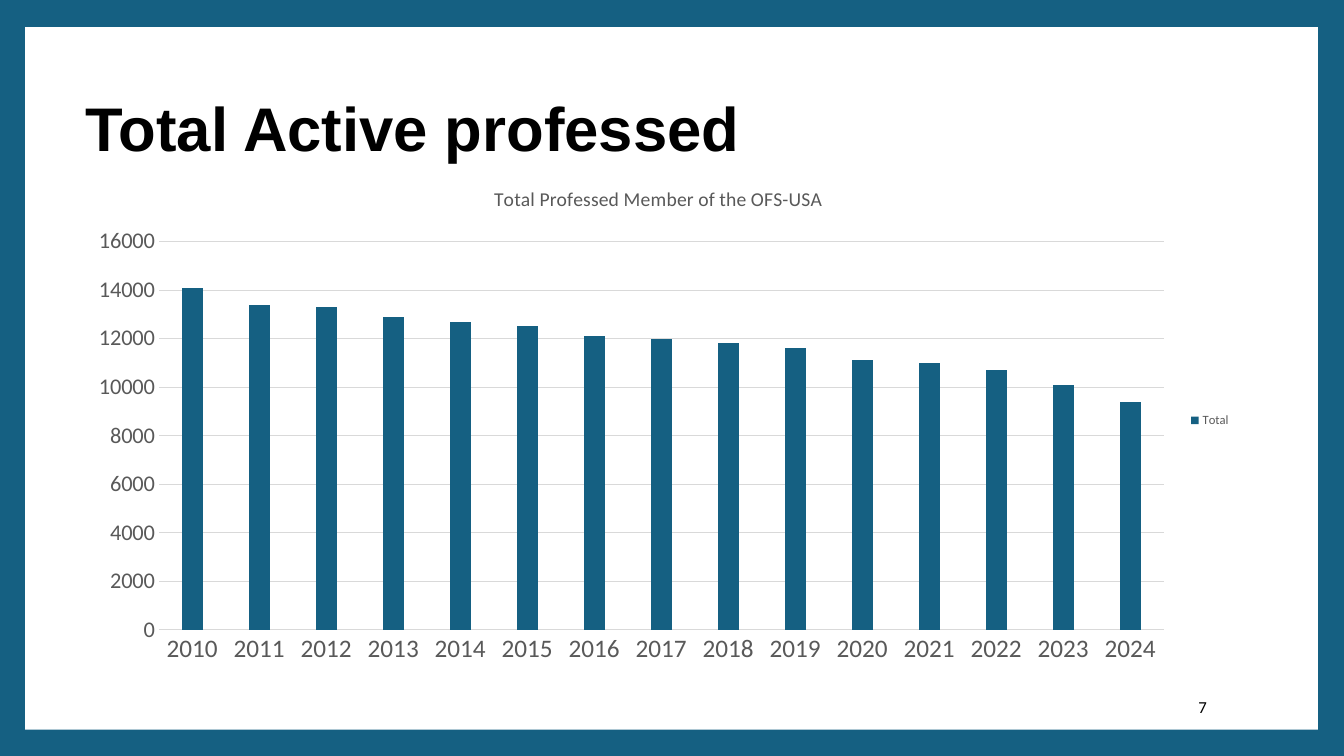
"""Build the slide charting total active professed members by year."""
from dataclasses import dataclass

import pptx
import pptx.chart.data
import pptx.dml.color
import pptx.enum.chart
import pptx.enum.shapes
import pptx.enum.text
import pptx.util

Inches = pptx.util.Inches
Pt = pptx.util.Pt
Align = pptx.enum.text.PP_ALIGN

COLORS = {
    "blue": "156082",
    "white": "FFFFFF",
    "black": "000000",
    "gray": "595959",
    "line": "D9D9D9",
}
FIRST_YEAR = 2010
MEMBERS = [14100, 13400, 13300, 12900, 12700, 12500, 12100, 12000,
           11800, 11600, 11100, 11000, 10700, 10100, 9400]


@dataclass
class Label:
    text: str
    box: tuple[float, float, float, float]
    font: str
    size: float
    bold: bool
    align: Align
    spacing: float


TITLE = Label("Total Active professed", (0.75, 0.68, 11.37, 1.26),
              "Arial", 44, True, Align.LEFT, 0.9)
PAGE_NUMBER = Label("7", (10.2, 6.81, 1.87, 0.4),
                    "Calibri", 12, False, Align.RIGHT, 1.0)


def rgb(name: str) -> pptx.dml.color.RGBColor:
    return pptx.dml.color.RGBColor.from_string(COLORS[name])


def style_font(font, name: str, size: float, color: str, bold: bool = False) -> None:
    font.name = name
    font.size = Pt(size)
    font.bold = bold
    font.color.rgb = rgb(color)


def style_line(line, color: str) -> None:
    line.color.rgb = rgb(color)
    line.width = Pt(0.75)


def write_label(shape, label: Label) -> None:
    shape.left, shape.top, shape.width, shape.height = map(Inches, label.box)
    frame = shape.text_frame
    frame.word_wrap = True
    frame.auto_size = pptx.enum.text.MSO_AUTO_SIZE.NONE
    frame.vertical_anchor = pptx.enum.text.MSO_ANCHOR.MIDDLE
    paragraph = frame.paragraphs[0]
    paragraph.alignment = label.align
    paragraph.line_spacing = label.spacing
    run = paragraph.add_run()
    run.text = label.text
    style_font(run.font, label.font, label.size, "black", label.bold)


def add_panel(slide) -> None:
    panel = slide.shapes.add_shape(
        pptx.enum.shapes.MSO_SHAPE.RECTANGLE,
        Inches(0.25), Inches(0.27), Inches(12.82), Inches(6.97))
    panel.shadow.inherit = False
    panel.fill.solid()
    panel.fill.fore_color.rgb = rgb("white")
    panel.line.fill.background()
    slide.shapes.title.element.addprevious(panel.element)


def add_member_chart(slide) -> None:
    data = pptx.chart.data.CategoryChartData()
    data.categories = [str(FIRST_YEAR + index) for index in range(len(MEMBERS))]
    data.add_series("Total", MEMBERS)
    chart = slide.shapes.add_chart(
        pptx.enum.chart.XL_CHART_TYPE.COLUMN_CLUSTERED,
        Inches(0.75), Inches(1.65), Inches(11.56), Inches(5.04), data).chart
    style_font(chart.font, "Calibri", 10, "black")

    chart.has_title = True
    run = chart.chart_title.text_frame.paragraphs[0].add_run()
    run.text = "Total Professed Member of the OFS-USA"
    style_font(run.font, "Calibri", 14, "gray")
    chart.chart_title.include_in_layout = False

    chart.has_legend = True
    chart.legend.position = pptx.enum.chart.XL_LEGEND_POSITION.RIGHT
    chart.legend.include_in_layout = False
    style_font(chart.legend.font, "Calibri", 9, "gray")

    for axis, size in ((chart.category_axis, 18), (chart.value_axis, 16)):
        axis.major_tick_mark = pptx.enum.chart.XL_TICK_MARK.NONE
        axis.minor_tick_mark = pptx.enum.chart.XL_TICK_MARK.NONE
        style_font(axis.tick_labels.font, "Calibri", size, "gray")
    style_line(chart.category_axis.format.line, "line")
    value_axis = chart.value_axis
    value_axis.minimum_scale = 0
    value_axis.maximum_scale = 16000
    value_axis.major_unit = 2000
    value_axis.format.line.fill.background()
    value_axis.has_major_gridlines = True
    style_line(value_axis.major_gridlines.format.line, "line")

    plot = chart.plots[0]
    plot.gap_width = 219
    plot.overlap = -27
    plot.vary_by_categories = False
    series = plot.series[0]
    series.format.fill.solid()
    series.format.fill.fore_color.rgb = rgb("blue")


def main() -> None:
    presentation = pptx.Presentation()
    presentation.slide_width = Inches(13.33)
    presentation.slide_height = Inches(7.5)
    slide = presentation.slides.add_slide(presentation.slide_layouts[5])
    slide.background.fill.solid()
    slide.background.fill.fore_color.rgb = rgb("blue")
    add_panel(slide)
    write_label(slide.shapes.title, TITLE)
    write_label(slide.shapes.add_textbox(*map(Inches, PAGE_NUMBER.box)), PAGE_NUMBER)
    add_member_chart(slide)
    presentation.save("out.pptx")


if __name__ == "__main__":
    main()
